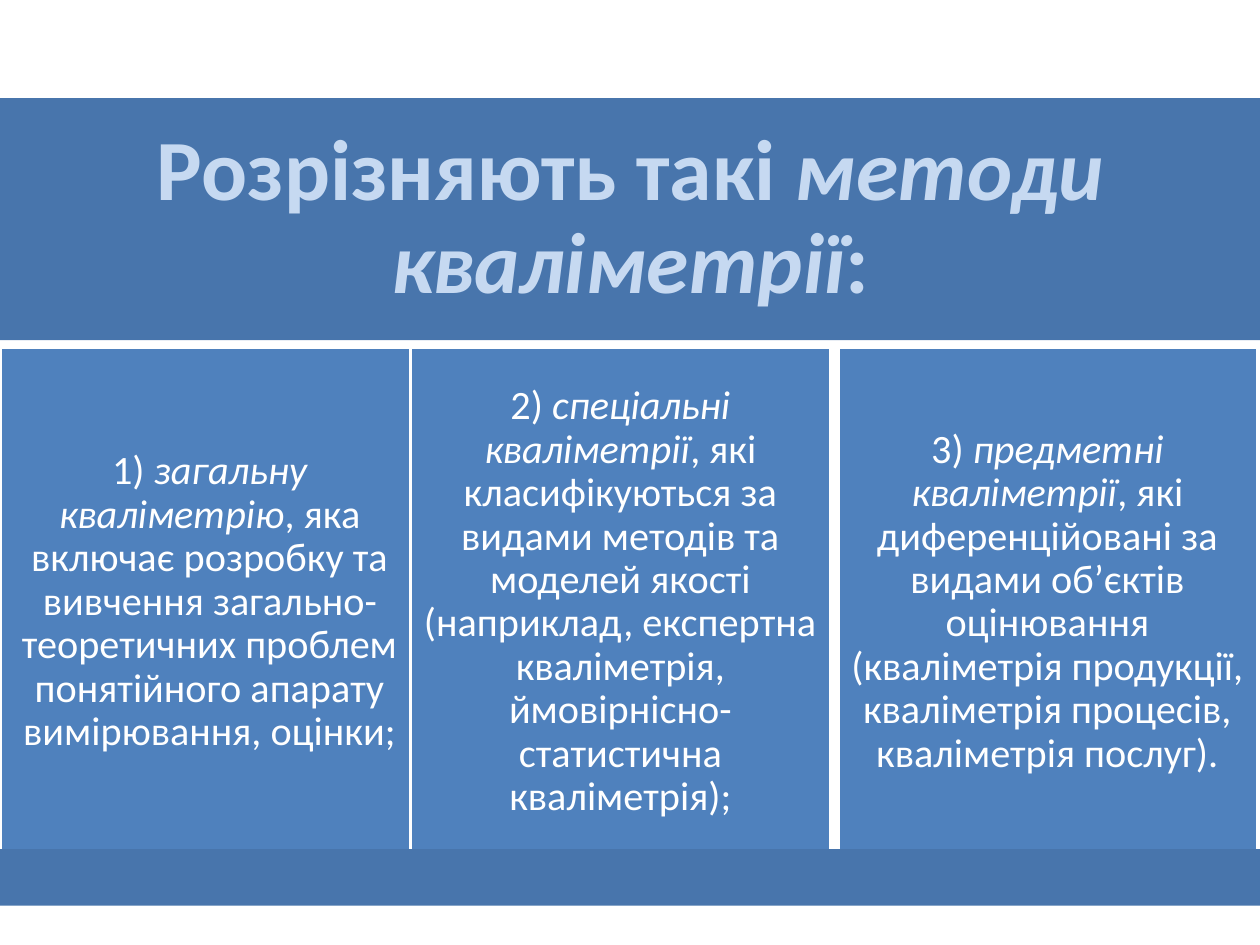
from pptx import Presentation
from pptx.dml.color import RGBColor
from pptx.enum.shapes import MSO_SHAPE
from pptx.enum.text import MSO_ANCHOR, MSO_AUTO_SIZE, PP_ALIGN
from pptx.util import Cm, Pt

RECT = MSO_SHAPE.RECTANGLE
MIDDLE = MSO_ANCHOR.MIDDLE
NO_AUTOFIT = MSO_AUTO_SIZE.NONE
CENTER = PP_ALIGN.CENTER

DARK_BLUE = RGBColor(0x48, 0x75, 0xAC)
BLUE = RGBColor(0x4F, 0x81, 0xBD)
PALE_BLUE = RGBColor(0xC6, 0xD9, 0xF1)
WHITE = RGBColor(0xFF, 0xFF, 0xFF)

SLIDE_W, SLIDE_H = Cm(25.4), Cm(19.05)
TITLE_BOX = (0, Cm(1.98), SLIDE_W, Cm(4.88))
COLUMNS_BOX = (0, Cm(7.01), Cm(25.35), Cm(10.26))
FOOTER_BOX = (0, Cm(17.12), SLIDE_W, Cm(1.14))
COLUMN_W = Cm(8.46)
COLUMN_OFFSETS = (0, Cm(8.28), Cm(16.89))

TITLE = ("Розрізняють такі\u00a0", "методи кваліметрії", ":")
METHODS = (
    ("1)\u00a0", "загальну кваліметрію",
     ", яка включає розробку та вивчення загально-теоретичних проблем "
     "понятійного апарату вимірювання, оцінки;"),
    ("2)\u00a0", "спеціальні кваліметрії",
     ", які класифікуються за видами методів та моделей якості (наприклад, "
     "експертна кваліметрія, ймовірнісно-статистична кваліметрія);"),
    ("3)\u00a0", "предметні кваліметрії",
     ", які диференційовані за видами об’єктів оцінювання (кваліметрія "
     "продукції, кваліметрія процесів, кваліметрія послуг)."),
)


def set_attrs(obj, values):
    for name, value in values.items():
        setattr(obj, name, value)


def set_fill(sp, color):
    sp.fill.solid()
    sp.fill.fore_color.rgb = color


def write_text(sp, parts, size, color, inset, bold=False):
    """Write plain, italic and plain runs, centred in the shape."""
    tf = sp.text_frame
    set_attrs(tf, {"word_wrap": True, "auto_size": NO_AUTOFIT,
                   "vertical_anchor": MIDDLE,
                   "margin_left": inset, "margin_right": inset,
                   "margin_top": inset, "margin_bottom": inset})
    p = tf.paragraphs[0]
    set_attrs(p, {"alignment": CENTER, "line_spacing": 0.9})
    for i, part in enumerate(parts):
        r = p.add_run()
        r.text = part
        set_attrs(r.font, {"name": "Calibri", "size": size, "bold": bold,
                           "italic": i == 1})
        r.font.color.rgb = color


def add_rect(s, box, color):
    sp = s.shapes.add_shape(RECT, *box)
    sp.shadow.inherit = False
    set_fill(sp, color)
    sp.line.fill.background()
    return sp


def fill_title(s, box):
    sp = s.shapes.title
    set_attrs(sp, dict(zip(("left", "top", "width", "height"), box)))
    set_fill(sp, DARK_BLUE)
    write_text(sp, TITLE, Pt(49), PALE_BLUE, Cm(0.5), bold=True)


def add_columns(s, box):
    left, top, _, height = box
    for offset, parts in zip(COLUMN_OFFSETS, METHODS):
        sp = add_rect(s, (left + offset, top, COLUMN_W, height), BLUE)
        sp.line.color.rgb = WHITE
        sp.line.width = Pt(2)
        write_text(sp, parts, Pt(23), WHITE, Cm(0.23))


def main():
    prs = Presentation()
    set_attrs(prs, {"slide_width": SLIDE_W, "slide_height": SLIDE_H})
    s = prs.slides.add_slide(prs.slide_layouts[5])
    fill_title(s, TITLE_BOX)
    add_columns(s, COLUMNS_BOX)
    add_rect(s, FOOTER_BOX, DARK_BLUE)
    prs.save("out.pptx")


if __name__ == "__main__":
    main()
